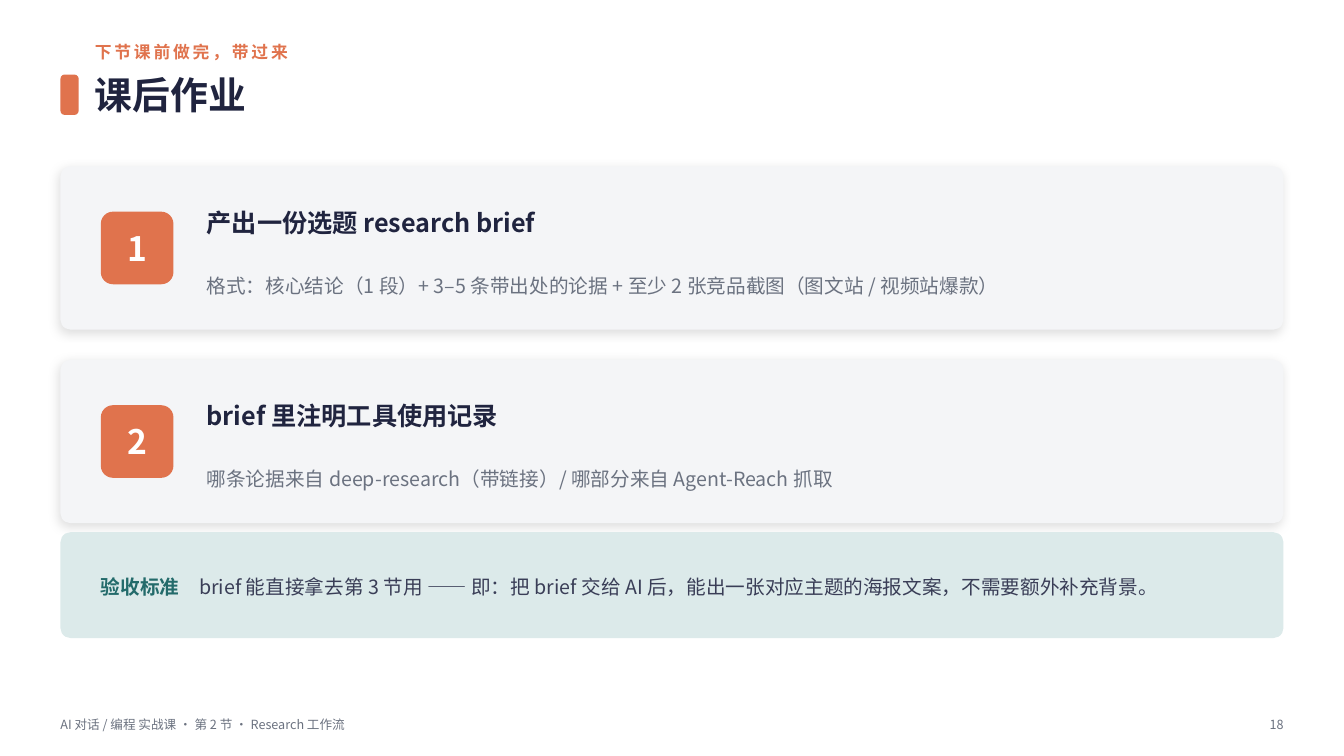
from lxml import etree
from pptx import Presentation
from pptx.dml.color import RGBColor
from pptx.enum.shapes import MSO_SHAPE
from pptx.enum.text import MSO_ANCHOR, PP_ALIGN
from pptx.oxml.ns import qn
from pptx.util import Inches, Pt

ROUND = MSO_SHAPE.ROUNDED_RECTANGLE
MIDDLE = MSO_ANCHOR.MIDDLE
LEFT, CENTER, RIGHT = PP_ALIGN.LEFT, PP_ALIGN.CENTER, PP_ALIGN.RIGHT

FONT = "Noto Sans CJK SC"
ORANGE, NAVY, GRAY, SLATE = "E0734D", "20243F", "6B7280", "3A3E57"
TEAL, MINT, PALE, WHITE = "236B6B", "DCEAEA", "F4F5F7", "FFFFFF"

WIDE, HIGH = 13.33, 7.5
EDGE = 0.6                      # outer margin
PAD = 0.4                       # inner margin of cards
SPAN = WIDE - 2 * EDGE
HEAD = 0.94                     # left of the heading texts
BODY = 2.05                     # left of the card texts
TOP, CARD, GAP = 1.65, 1.62, 0.3
BADGE = 0.72
FOOT = 7.04

TASKS = [
    ("产出一份选题 research brief",
     "格式：核心结论（1 段）+ 3–5 条带出处的论据 + 至少 2 张竞品截图（图文站 / 视频站爆款）"),
    ("brief 里注明工具使用记录",
     "哪条论据来自 deep-research（带链接）/ 哪部分来自 Agent-Reach 抓取"),
]


def color(code):
    return RGBColor.from_string(code)


def write(shape, runs, size, align=LEFT, line=None, track=None):
    """Fill one paragraph with runs of (text, colour, bold)."""
    frame = shape.text_frame
    frame.word_wrap = True
    frame.vertical_anchor = MIDDLE
    frame.margin_left = frame.margin_right = 0
    frame.margin_top = frame.margin_bottom = 0
    para = frame.paragraphs[0]
    para.alignment = align
    if line:
        para.line_spacing = line
    fonts = [para.font]
    if len(runs) > 1:
        fonts = []
    for text, _, _ in runs:
        run = para.add_run()
        run.text = text
        if len(runs) > 1:
            fonts.append(run.font)
    for font, (_, code, bold) in zip(fonts, runs):
        font.color.rgb = color(code)
        font.bold = bold
    para.font.size = Pt(size)
    para.font.name = FONT
    props = para._p.pPr.find(qn("a:defRPr"))
    etree.SubElement(props, qn("a:ea")).set("typeface", FONT)
    if track:
        props.set("spc", str(track * 100))


def label(slide, box, text, size, code, bold=False, **style):
    shape = slide.shapes.add_textbox(*map(Inches, box))
    write(shape, [(text, code, bold)], size, **style)


def block(slide, box, code, radius):
    """Add a plain rounded box whose corner radius is in inches."""
    shape = slide.shapes.add_shape(ROUND, *map(Inches, box))
    shape.adjustments[0] = radius / min(box[2:])
    shape.fill.solid()
    shape.fill.fore_color.rgb = color(code)
    shape.line.fill.background()
    shape.shadow.inherit = False
    return shape


def shade(shape):
    """Give a shape a soft drop shadow."""
    effects = shape._element.spPr.find(qn("a:effectLst"))
    outer = etree.SubElement(effects, qn("a:outerShdw"), blurRad=str(Pt(7)),
                             dist=str(Pt(3)), dir=str(135 * 60000),
                             algn="bl", rotWithShape="0")
    tint = etree.SubElement(outer, qn("a:srgbClr"), val="000000")
    etree.SubElement(tint, qn("a:alpha"), val="12000")


def header(slide):
    wide = WIDE - EDGE - HEAD
    label(slide, (HEAD, 0.36, wide, 0.3), "下节课前做完，带过来",
          12, ORANGE, True, track=2)
    block(slide, (EDGE, 0.74, 0.18, 0.4), ORANGE, 0.04)
    label(slide, (HEAD, 0.64, wide, 0.6), "课后作业", 27, NAVY, True)


def task(slide, index, title, detail):
    top = TOP + index * (CARD + GAP)
    wide = WIDE - EDGE - PAD - BODY
    shade(block(slide, (EDGE, top, SPAN, CARD), PALE, 0.1))
    badge = block(slide, (EDGE + PAD, top + (CARD - BADGE) / 2, BADGE, BADGE),
                  ORANGE, 0.12)
    write(badge, [(str(index + 1), WHITE, True)], 24, CENTER)
    label(slide, (BODY, top + 0.28, wide, 0.55), title, 18, NAVY, True)
    label(slide, (BODY, top + 0.88, wide, 0.58), detail, 14, GRAY, line=1.1)


def banner(slide):
    top, high = 5.28, 1.05
    block(slide, (EDGE, top, SPAN, high), MINT, 0.1)
    text = slide.shapes.add_textbox(
        *map(Inches, (EDGE + PAD, top, SPAN - 2 * PAD, high)))
    write(text, [
        ("验收标准　", TEAL, True),
        ("brief 能直接拿去第 3 节用 —— 即：把 brief 交给 AI 后，"
         "能出一张对应主题的海报文案，不需要额外补充背景。", SLATE, False),
    ], 14, line=1.15)


def footer(slide):
    label(slide, (EDGE, FOOT, 9, 0.3),
          "AI 对话 / 编程 实战课 · 第 2 节 · Research 工作流", 9, GRAY)
    label(slide, (WIDE - EDGE - 0.7, FOOT, 0.7, 0.3), "18", 9, GRAY, align=RIGHT)


def main():
    deck = Presentation()
    deck.slide_width, deck.slide_height = Inches(WIDE), Inches(HIGH)
    slide = deck.slides.add_slide(deck.slide_layouts[6])
    header(slide)
    for index, (title, detail) in enumerate(TASKS):
        task(slide, index, title, detail)
    banner(slide)
    footer(slide)
    deck.save("out.pptx")


if __name__ == "__main__":
    main()
